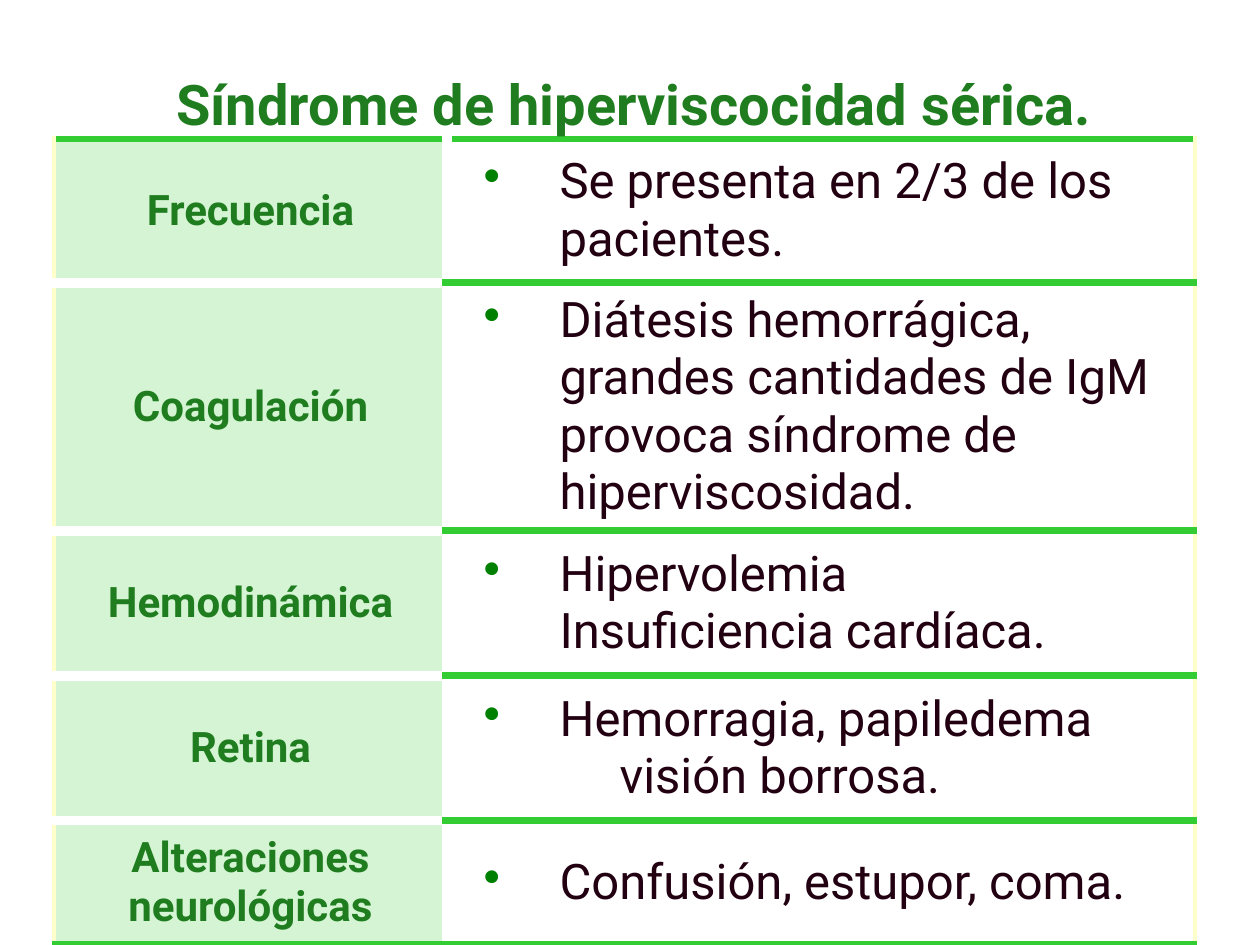
from lxml import etree
from pptx import Presentation
from pptx.dml.color import RGBColor
from pptx.enum.text import MSO_ANCHOR, PP_ALIGN
from pptx.oxml.ns import qn
from pptx.util import Emu, Pt

MIDDLE = MSO_ANCHOR.MIDDLE
CENTER = PP_ALIGN.CENTER
PX = 914400 // 126
FONT = "Roboto"
COLORS = {
    "heading": "1F7D1F",
    "body": "220011",
    "label_fill": "D4F4D4",
    "bullet": "008000",
    "rule": "33CC33",
    "gap": "FFFFFF",
    "edge": "FFFFCC",
}
RULE, GAP, EDGE = ("rule", 4.5), ("gap", 6), ("edge", 2.25)

TITLE = "Síndrome de hiperviscocidad sérica."
FINDINGS = [
    ("Frecuencia", "Se presenta en 2/3 de los pacientes.", 144),
    ("Coagulación", "Diátesis hemorrágica, grandes cantidades de IgM "
     "provoca síndrome de hiperviscosidad.", 248),
    ("Hemodinámica", "Hipervolemia\vInsuficiencia cardíaca.", 145),
    ("Retina", "Hemorragia, papiledema\v\tvisión borrosa.", 145),
    ("Alteraciones neurológicas", "Confusión, estupor, coma.", 124),
]
COLUMN_WIDTHS = (393, 748)
TEXT_INDENT, HANGING, TAB_STOP = 100, 76, 160


def px(length):
    return Emu(length * PX)


def style_text(para, size, color, bold):
    for span in para.runs:
        font = span.font
        font.name = FONT
        font.size = Pt(size)
        font.bold = bold
        font.color.rgb = RGBColor.from_string(COLORS[color])


def set_borders(cell, left, right, top, bottom):
    """Each side is a (color name, width in points) pair."""
    properties = cell._tc.get_or_add_tcPr()
    sides = {"a:lnL": left, "a:lnR": right, "a:lnT": top, "a:lnB": bottom}
    for tag, (color, width) in sides.items():
        line = etree.SubElement(properties, qn(tag), w=str(Pt(width)))
        fill = etree.SubElement(line, qn("a:solidFill"))
        etree.SubElement(fill, qn("a:srgbClr"), val=COLORS[color])


def add_bullet(para):
    properties = para._p.get_or_add_pPr()
    properties.set("marL", str(px(TEXT_INDENT)))
    properties.set("indent", str(px(-HANGING)))
    bullet_color = etree.SubElement(properties, qn("a:buClr"))
    etree.SubElement(bullet_color, qn("a:srgbClr"), val=COLORS["bullet"])
    etree.SubElement(properties, qn("a:buChar"), char="•")
    tabs = etree.SubElement(properties, qn("a:tabLst"))
    etree.SubElement(tabs, qn("a:tab"), pos=str(px(TAB_STOP)), algn="l")


def fill_label_cell(cell, text, top, bottom):
    set_borders(cell, EDGE, GAP, top, bottom)
    cell.fill.solid()
    cell.fill.fore_color.rgb = RGBColor.from_string(COLORS["label_fill"])
    cell.vertical_anchor = MIDDLE
    para = cell.text_frame.paragraphs[0]
    para.text = text
    para.alignment = CENTER
    style_text(para, 24, "heading", True)


def fill_finding_cell(cell, text):
    set_borders(cell, GAP, EDGE, RULE, RULE)
    cell.fill.background()
    cell.vertical_anchor = MIDDLE
    para = cell.text_frame.paragraphs[0]
    para.text = text
    add_bullet(para)
    style_text(para, 28, "body", False)


def add_findings_table(page, left, top):
    height = sum(row_height for _, _, row_height in FINDINGS)
    table = page.shapes.add_table(
        len(FINDINGS), len(COLUMN_WIDTHS), px(left), px(top),
        px(sum(COLUMN_WIDTHS)), px(height)).table
    table.first_row = False
    table.horz_banding = False
    for column, width in zip(table.columns, COLUMN_WIDTHS):
        column.width = px(width)
    last = len(FINDINGS) - 1
    for index, (label, finding, row_height) in enumerate(FINDINGS):
        table.rows[index].height = px(row_height)
        fill_label_cell(table.cell(index, 0), label,
                        RULE if index == 0 else GAP,
                        RULE if index == last else GAP)
        fill_finding_cell(table.cell(index, 1), finding)


def add_title(page, left, top, width, height):
    box = page.shapes.add_textbox(px(left), px(top), px(width), px(height))
    frame = box.text_frame
    frame.word_wrap = True
    frame.vertical_anchor = MIDDLE
    para = frame.paragraphs[0]
    para.text = TITLE
    para.alignment = CENTER
    style_text(para, 32, "heading", True)


def main():
    deck = Presentation()
    deck.slide_width, deck.slide_height = px(1260), px(945)
    page = deck.slides.add_slide(deck.slide_layouts[6])
    add_findings_table(page, 54, 139)
    add_title(page, 94, 26, 1081, 155)
    deck.save("out.pptx")


if __name__ == "__main__":
    main()
